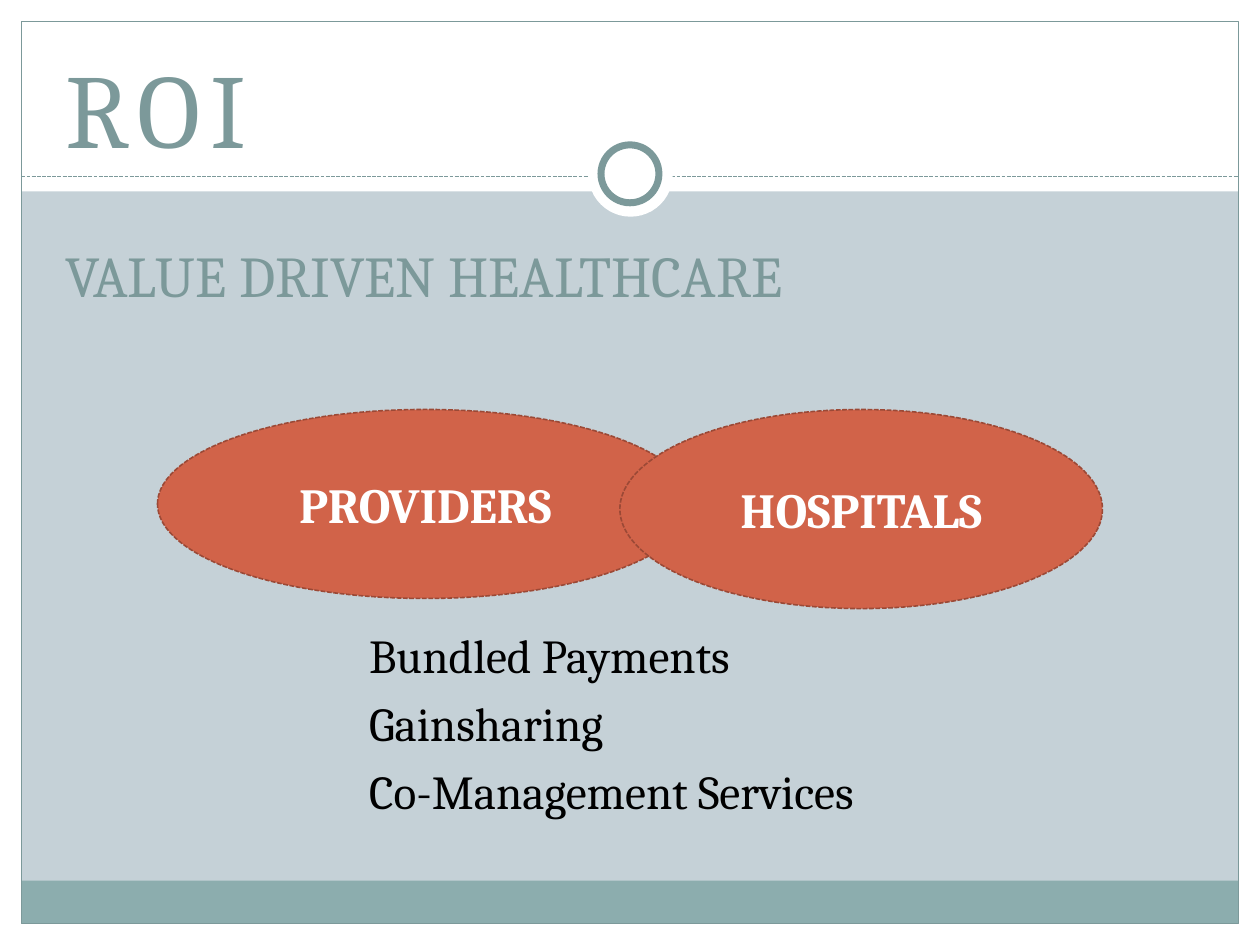
import pptx
import pptx.dml.color
import pptx.enum.dml
import pptx.enum.shapes
import pptx.enum.text
import pptx.oxml.ns
import pptx.util
import lxml.etree

Inches = pptx.util.Inches
Pt = pptx.util.Pt
Kind = pptx.enum.shapes.MSO_SHAPE
Align = pptx.enum.text.PP_ALIGN
Anchor = pptx.enum.text.MSO_ANCHOR

WIDTH, HEIGHT = 10, 7.5
MARGIN = 0.17
INNER_WIDTH = WIDTH - 2 * MARGIN
WHITE, BLACK = "FFFFFF", "000000"
TEAL, SAGE, MIST = "7C999A", "8CADAE", "C5D1D7"
RUST, DARK_RUST = "D16349", "9B4936"


def color(value):
    return pptx.dml.color.RGBColor.from_string(value)


class SlideStyle:
    font = "Cambria"
    dash = pptx.enum.dml.MSO_LINE.SQUARE_DOT

    def __init__(self, page):
        self.page = page
        page.background.fill.solid()
        page.background.fill.fore_color.rgb = color(MIST)

    def outline(self, line, shade, width, dashed=False):
        line.color.rgb = color(shade)
        line.width = Pt(width)
        if dashed:
            line.dash_style = self.dash

    def shape(self, kind, left, top, width, height, fill=None, line=None, weight=0.75, dashed=False):
        box = self.page.shapes.add_shape(kind, Inches(left), Inches(top), Inches(width), Inches(height))
        box.shadow.inherit = False
        if fill:
            box.fill.solid()
            box.fill.fore_color.rgb = color(fill)
        else:
            box.fill.background()
        if line:
            self.outline(box.line, line, weight, dashed)
        else:
            box.line.fill.background()
        return box

    def rule(self, left, right, top):
        line = self.page.shapes.add_connector(
            pptx.enum.shapes.MSO_CONNECTOR.STRAIGHT, Inches(left), Inches(top), Inches(right), Inches(top))
        self.outline(line.line, TEAL, 0.75, True)
        lxml.etree.SubElement(line.element.spPr, pptx.oxml.ns.qn("a:effectLst"))

    def span(self, para, text, size, shade, bold=False, spacing=0):
        span = para.add_run()
        span.text = text
        span.font.name = self.font
        span.font.size = Pt(size)
        span.font.bold = bold
        span.font.color.rgb = color(shade)
        if spacing:
            span.font._element.set("spc", str(spacing * 100))

    def placeholder(self, box, left, top, width, height, anchor):
        box.left, box.top = Inches(left), Inches(top)
        box.width, box.height = Inches(width), Inches(height)
        box.element.getparent().append(box.element)
        frame = box.text_frame
        frame.word_wrap = True
        frame.auto_size = pptx.enum.text.MSO_AUTO_SIZE.NONE
        frame.vertical_anchor = anchor
        return frame

    def title(self, heading, subheading):
        frame = self.placeholder(self.page.shapes.title, 0.42, 0, 9, 2.5, Anchor.BOTTOM)
        first, second = frame.paragraphs[0], frame.add_paragraph()
        first.alignment = second.alignment = Align.LEFT
        second.space_before = Pt(40)
        self.span(first, heading, 60, TEAL, spacing=6)
        self.span(second, subheading, 33, TEAL)

    def body(self, items):
        frame = self.placeholder(self.page.placeholders[1], 2.83, 4.92, 8.58, 3.87, Anchor.TOP)
        for number, item in enumerate(items):
            para = frame.add_paragraph() if number else frame.paragraphs[0]
            para.alignment = Align.LEFT
            para.space_before = Pt(6.3)
            properties = para._p.get_or_add_pPr()
            properties.set("marL", str(Inches(0.3)))
            properties.set("indent", str(Inches(-0.3)))
            lxml.etree.SubElement(properties, pptx.oxml.ns.qn("a:buNone"))
            self.span(para, item, 27, BLACK)

    def oval(self, text, left, top, width, height):
        box = self.shape(Kind.OVAL, left, top, width, height, RUST, DARK_RUST, 0.9, True)
        box.text_frame.word_wrap = True
        box.text_frame.vertical_anchor = Anchor.MIDDLE
        para = box.text_frame.paragraphs[0]
        para.alignment = Align.CENTER
        self.span(para, text, 28, WHITE, bold=True)

    def frame(self):
        bands = [
            (0, HEIGHT - MARGIN, WIDTH, MARGIN, WHITE),
            (0, 0, WIDTH, 1.52, WHITE),
            (0, 0, MARGIN, HEIGHT, WHITE),
            (WIDTH - MARGIN, 0, MARGIN, HEIGHT, WHITE),
            (MARGIN, 6.99, INNER_WIDTH, 0.34, SAGE),
        ]
        for left, top, width, height, fill in bands:
            self.shape(Kind.RECTANGLE, left, top, width, height, fill)
        self.shape(Kind.RECTANGLE, MARGIN, MARGIN, INNER_WIDTH, HEIGHT - 2 * MARGIN, line=TEAL)
        self.rule(MARGIN, WIDTH - MARGIN, 1.4)
        self.shape(Kind.OVAL, 4.67, 1.05, 0.67, 0.67, WHITE)
        self.shape(Kind.OVAL, 4.77, 1.15, 0.46, 0.46, WHITE, TEAL, 4)


def main():
    deck = pptx.Presentation()
    deck.slide_width, deck.slide_height = Inches(WIDTH), Inches(HEIGHT)
    style = SlideStyle(deck.slides.add_slide(deck.slide_layouts[1]))
    style.frame()
    style.title("ROI", "VALUE DRIVEN HEALTHCARE")
    style.body(["Bundled Payments", "Gainsharing", "Co-Management Services"])
    style.oval("PROVIDERS", 1.25, 3.25, 4.25, 1.5)
    style.oval("HOSPITALS", 4.92, 3.25, 3.83, 1.58)
    deck.save("out.pptx")


if __name__ == "__main__":
    main()
